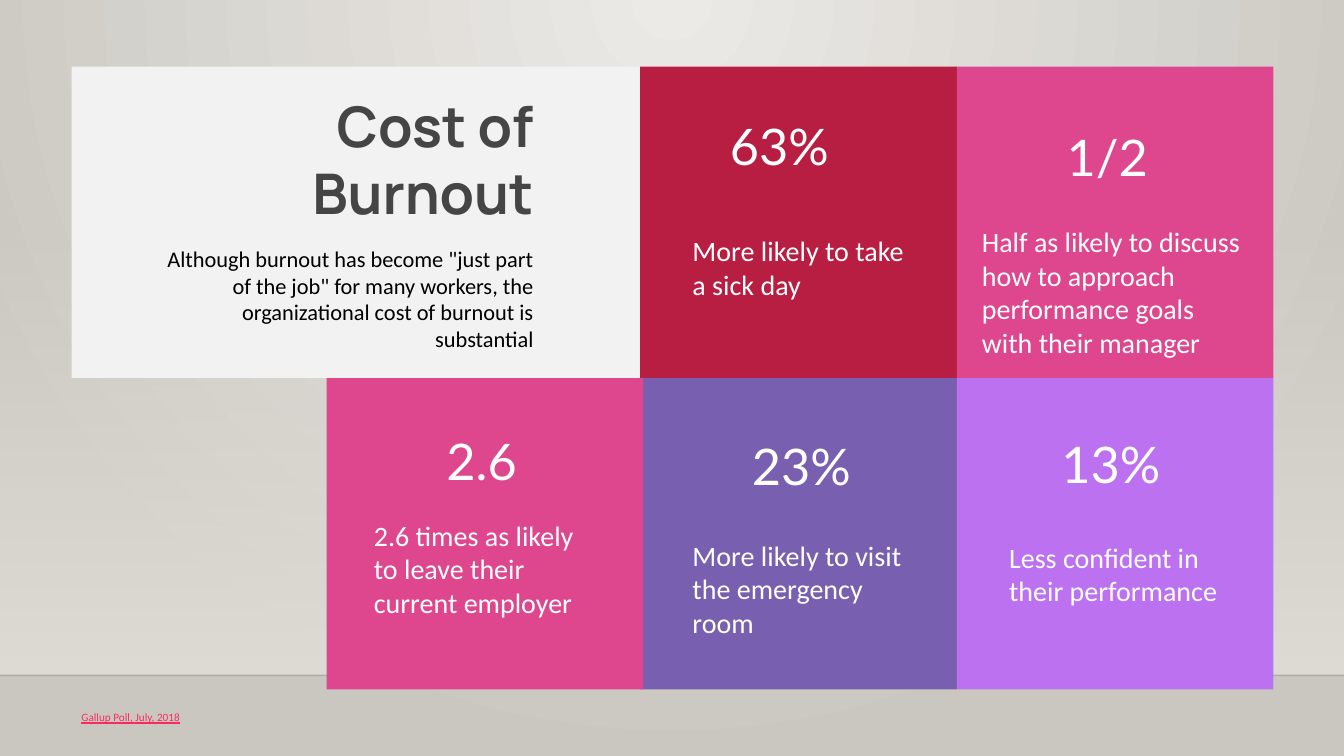
from dataclasses import dataclass

from lxml.etree import SubElement
from pptx import Presentation
from pptx.dml.color import RGBColor as RGB
from pptx.enum.shapes import MSO_CONNECTOR as CONN, MSO_SHAPE as SHAPE
from pptx.enum.text import MSO_ANCHOR as ANCHOR, MSO_AUTO_SIZE as FIT, PP_ALIGN as ALIGN
from pptx.oxml.ns import qn
from pptx.util import Inches, Pt


@dataclass(frozen=True)
class Theme:
    glow: str = "ECEAE7"
    edge: str = "CAC7C1"
    wall: str = "DFDBD5"
    horizon: str = "000001"
    panel: str = "F2F2F2"
    pink: str = "DE478E"
    violet: str = "BC72F0"
    red: str = "B71E42"
    purple: str = "795FAF"
    heading: str = "454545"
    ink: str = "000000"
    white: str = "FFFFFF"
    link: str = "FA2B5C"
    heading_font: str = "Manrope"
    figure_font: str = "Lato"
    body_font: str = "Calibri"
    heading_size: int = 40
    figure_size: int = 36
    label_size: int = 20
    intro_size: int = 16
    source_size: int = 8


class SlideBuilder:
    def __init__(self, slide, theme):
        self.slide = slide
        self.theme = theme

    def gradient(self, fill, colors):
        fill.gradient()
        for stop, color in zip(fill.gradient_stops, colors):
            stop.color.rgb = RGB.from_string(color)

    def alpha(self, element, percent):
        color = next(element.iter(qn("a:srgbClr")))
        SubElement(color, qn("a:alpha")).set("val", str(percent * 1000))

    def background(self):
        t = self.theme
        self.gradient(self.slide.background.fill, (t.glow, t.edge))
        grad = next(self.slide.element.iter(qn("a:gradFill")))
        grad.remove(grad.find(qn("a:lin")))
        circle = SubElement(grad, qn("a:path"))
        circle.set("path", "circle")
        focus = SubElement(circle, qn("a:fillToRect"))
        for side, value in (("l", 43000), ("t", 0), ("r", 43000), ("b", 100000)):
            focus.set(side, str(value))

    def rect(self, x, y, w, h, color=None):
        sp = self.slide.shapes.add_shape(
            SHAPE.RECTANGLE, Inches(x), Inches(y), Inches(w), Inches(h))
        sp.shadow.inherit = False
        sp.line.fill.background()
        if color:
            sp.fill.solid()
            sp.fill.fore_color.rgb = RGB.from_string(color)
        return sp

    def wall(self, x, y, w, h):
        sp = self.rect(x, y, w, h)
        self.gradient(sp.fill, (self.theme.wall, self.theme.wall))
        sp.fill.gradient_angle = 270
        self.alpha(sp.element, 0)

    def horizon(self, y, w):
        line = self.slide.shapes.add_connector(
            CONN.STRAIGHT, 0, Inches(y), Inches(w), Inches(y))
        line.line.width = Pt(1)
        line.line.color.rgb = RGB.from_string(self.theme.horizon)
        self.alpha(line.element, 20)
        SubElement(line.element.spPr, qn("a:effectLst"))

    def fill_text(self, sp, text, font, size, color, align=ALIGN.LEFT, bold=False,
                  underline=False):
        tf = sp.text_frame
        tf.word_wrap = True
        tf.auto_size = FIT.NONE
        tf.vertical_anchor = ANCHOR.TOP
        tf.text = text
        p = tf.paragraphs[0]
        p.alignment = align
        f = p.runs[0].font
        f.name, f.size, f.bold, f.underline = font, Pt(size), bold, underline
        f.color.rgb = RGB.from_string(color)

    def text(self, x, y, w, h, *content, **style):
        sp = self.slide.shapes.add_textbox(Inches(x), Inches(y), Inches(w), Inches(h))
        self.fill_text(sp, *content, **style)

    def title(self, x, y, w, h, text):
        t = self.theme
        sp = self.slide.shapes.title
        sp.left, sp.top, sp.width, sp.height = map(Inches, (x, y, w, h))
        self.slide.shapes.element.append(sp.element)
        self.fill_text(sp, text, t.heading_font, t.heading_size, t.heading,
                       align=ALIGN.RIGHT, bold=True)

    def figure(self, x, y, w, text):
        t = self.theme
        self.text(x, y, w, 0.71, text, t.figure_font, t.figure_size, t.white)

    def label(self, x, y, w, h, text):
        t = self.theme
        self.text(x, y, w, h, text, t.body_font, t.label_size, t.white)


def main():
    prs = Presentation()
    prs.slide_width, prs.slide_height = Inches(13.33), Inches(7.5)
    t = Theme()
    s = SlideBuilder(prs.slides.add_slide(prs.slide_layouts[5]), t)

    s.background()
    s.wall(0, 2.21, 13.33, 4.49)
    s.horizon(6.7, 13.33)

    left, top, tile_w, tile_h = 0.71, 0.66, 3.14, 3.09
    middle, right, lower = 6.35, 9.49, top + tile_h
    s.rect(left, top, middle - left, tile_h, t.panel)
    s.title(1.5, 0.86, 3.89, 1.45, "Cost of Burnout")
    s.text(1.5, 2.38, 3.89, 1.18,
           'Although burnout has become "just part of the job" for many workers, '
           "the organizational cost of burnout is substantial",
           t.body_font, t.intro_size, t.ink, align=ALIGN.RIGHT)

    stats = [
        (middle, top, t.red, (7.14, 1.09, 1.33, "63%"),
         (6.77, 2.27, 2.3, 0.77, "More likely to take a sick day")),
        (right, top, t.pink, (10.48, 1.2, 1.1, "1/2"),
         (9.64, 2.18, 2.83, 1.45,
          "Half as likely to discuss how to approach performance goals with their manager")),
        (middle, lower, t.purple, (7.36, 4.27, 1.44, "23%"),
         (6.77, 5.29, 2.3, 1.11, "More likely to visit the emergency room")),
        (right, lower, t.violet, (10.43, 4.25, 1.47, "13%"),
         (9.91, 5.31, 2.3, 0.77, "Less confident in their performance")),
        (3.24, lower, t.pink, (4.33, 4.22, 1.37, "2.6"),
         (3.61, 5.09, 2.3, 1.11, "2.6 times as likely to leave their current employer")),
    ]
    for x, y, color, figure, label in stats:
        s.rect(x, y, tile_w, tile_h, color)
        s.figure(*figure)
        s.label(*label)

    s.text(left, 7, 10.65, 0.24, "Gallup Poll, July, 2018",
           t.body_font, t.source_size, t.link, underline=True)
    prs.save("out.pptx")


if __name__ == "__main__":
    main()
